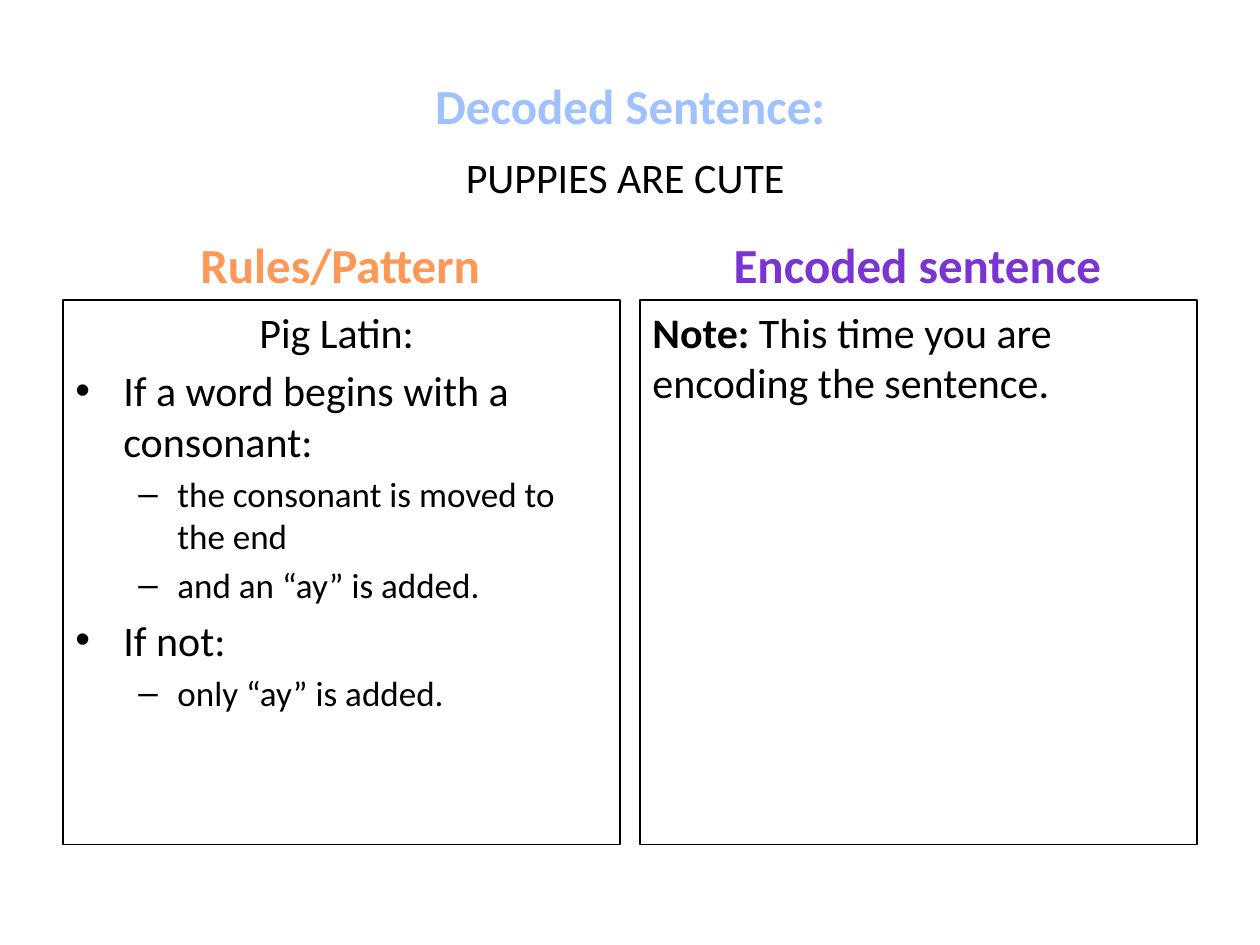
import pptx
import pptx.dml.color
import pptx.enum.shapes
import pptx.enum.text
import pptx.oxml
import pptx.oxml.ns
import pptx.util

Inches = pptx.util.Inches
Pt = pptx.util.Pt
ALIGN = pptx.enum.text.PP_ALIGN
ANCHOR = pptx.enum.text.MSO_ANCHOR

COLORS = {
    "text": "000000",
    "border": "000000",
    "decoded": "A0C1FF",
    "rules": "FF9856",
    "encoded": "7B34D2",
}
BULLETS = {0: ("•", 0.38, 0.38), 1: ("–", 0.81, 0.31)}
SIZES = {0: 24, 1: 20}
PANEL_TOP, PANEL_WIDTH, PANEL_HEIGHT = 2.38, 4.42, 4.32
RULES_LEFT, ENCODED_LEFT = 0.5, 5.08


def rgb(name):
    """Return the named colour."""
    return pptx.dml.color.RGBColor.from_string(COLORS[name])


def apply_formats(target, formats):
    """Set each format value on the target."""
    for name, value in formats.items():
        setattr(target, name, value)


def add_span(para, text, size, color="text", bold=False):
    """Add one formatted run to a paragraph."""
    span = para.add_run()
    span.text = text
    apply_formats(span.font, {"name": "Calibri", "size": Pt(size), "bold": bold})
    span.font.color.rgb = rgb(color)


def add_bullet(para, level):
    """Give a paragraph the bullet and hanging indent of its level."""
    symbol, margin, hanging = BULLETS[level]
    properties = para._p.get_or_add_pPr()
    properties.set("marL", str(Inches(margin)))
    properties.set("indent", str(-Inches(hanging)))
    for tag, attribute, value in (("a:buFont", "typeface", "Arial"), ("a:buChar", "char", symbol)):
        element = pptx.oxml.parse_xml(f"<{tag} {pptx.oxml.ns.nsdecls('a')}/>")
        element.set(attribute, value)
        properties.append(element)


def add_label(page, text, place, size, color="text", bold=False, **frame_formats):
    """Add a centred one-line text box."""
    box = page.shapes.add_textbox(*map(Inches, place))
    apply_formats(box.text_frame, {"word_wrap": True, **frame_formats})
    para = box.text_frame.paragraphs[0]
    para.alignment = ALIGN.CENTER
    add_span(para, text, size, color, bold)


def add_panel(page, left):
    """Add an outlined panel and return its text frame."""
    place = map(Inches, (left, PANEL_TOP, PANEL_WIDTH, PANEL_HEIGHT))
    panel = page.shapes.add_shape(pptx.enum.shapes.MSO_SHAPE.RECTANGLE, *place)
    panel.shadow.inherit = False
    panel.fill.background()
    panel.line.color.rgb = rgb("border")
    panel.line.width = Pt(0.75)
    apply_formats(panel.text_frame, {"word_wrap": True, "vertical_anchor": ANCHOR.TOP})
    return panel.text_frame


def add_rules(frame, heading, rules):
    """Fill a panel with a centred heading and bulleted rules."""
    para = frame.paragraphs[0]
    apply_formats(para, {"alignment": ALIGN.CENTER, "space_before": Pt(4.8)})
    add_span(para, heading, SIZES[0])
    for level, text in rules:
        para = frame.add_paragraph()
        size = SIZES[level]
        apply_formats(para, {"alignment": ALIGN.LEFT, "level": level, "space_before": Pt(size * 0.2)})
        add_bullet(para, level)
        add_span(para, text, size)


def add_note(frame, lead, text):
    """Fill a panel with a note that has a bold lead."""
    para = frame.paragraphs[0]
    apply_formats(para, {"alignment": ALIGN.LEFT, "space_before": Pt(4.8)})
    add_span(para, lead, SIZES[0], bold=True)
    add_span(para, text, SIZES[0])


def main():
    """Build the Pig Latin encoding slide."""
    deck = pptx.Presentation()
    apply_formats(deck, {"slide_width": Inches(10), "slide_height": Inches(7.5)})
    page = deck.slides.add_slide(deck.slide_layouts[6])

    add_label(page, "PUPPIES ARE CUTE ", (0.5, 0.3, 9, 1.38), 24,
              vertical_anchor=ANCHOR.BOTTOM, margin_bottom=Inches(0.08))
    add_rules(add_panel(page, RULES_LEFT), "Pig Latin: ", [
        (0, "If a word begins with a consonant:"),
        (1, "the consonant is moved to the end"),
        (1, "and an “ay” is added."),
        (0, "If not:"),
        (1, "only “ay” is added."),
    ])
    add_note(add_panel(page, ENCODED_LEFT), "Note:", " This time you are encoding the sentence.")

    headings = [
        ("Decoded Sentence:", (3.33, 0.55, 3.34, 0.57), "decoded"),
        ("Rules/Pattern", (1.47, 1.81, 2.46, 0.57), "rules"),
        ("Encoded sentence", (5.7, 1.81, 3.16, 0.57), "encoded"),
    ]
    for text, place, color in headings:
        add_label(page, text, place, 28, color, bold=True, word_wrap=False)

    deck.save("out.pptx")


if __name__ == "__main__":
    main()
